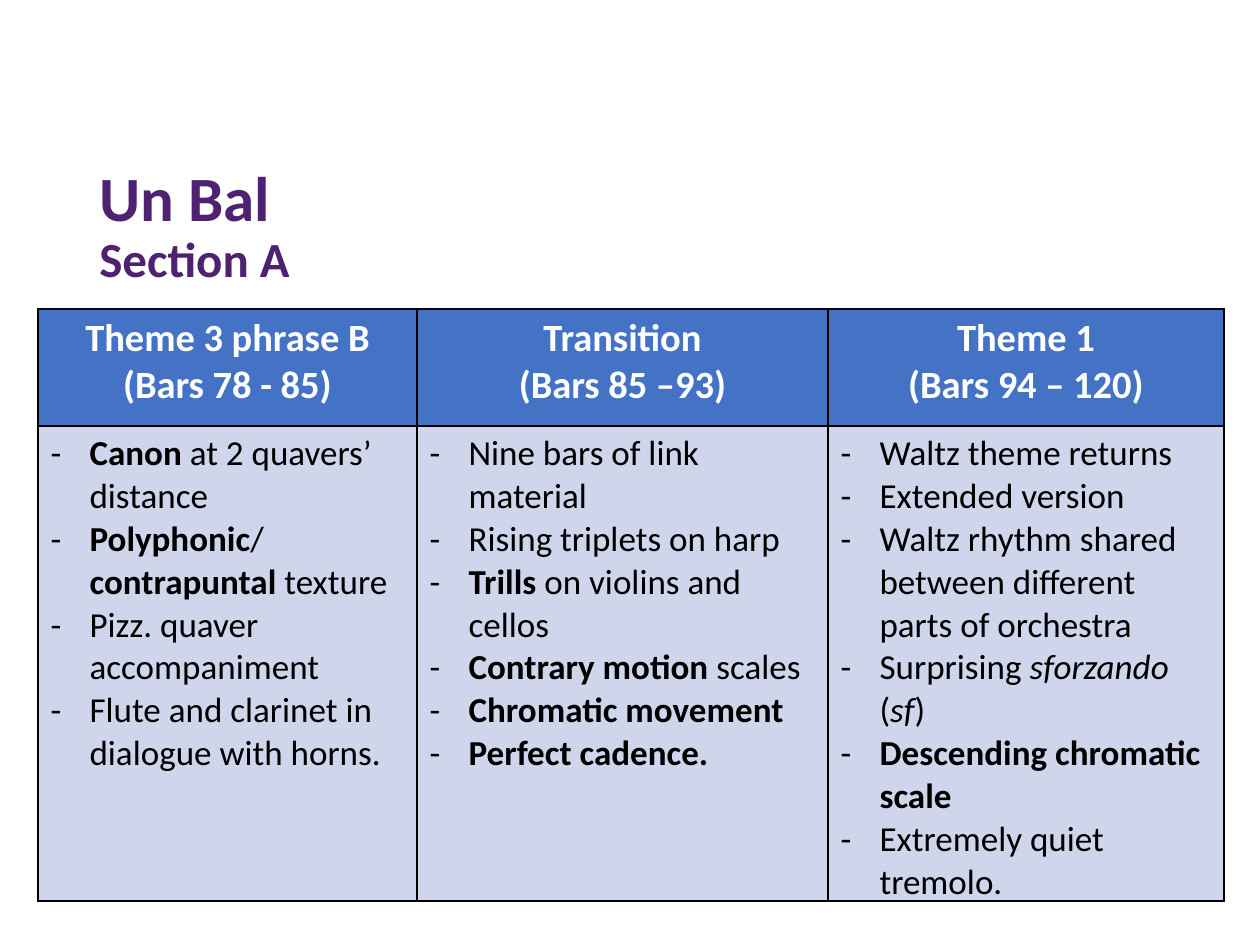
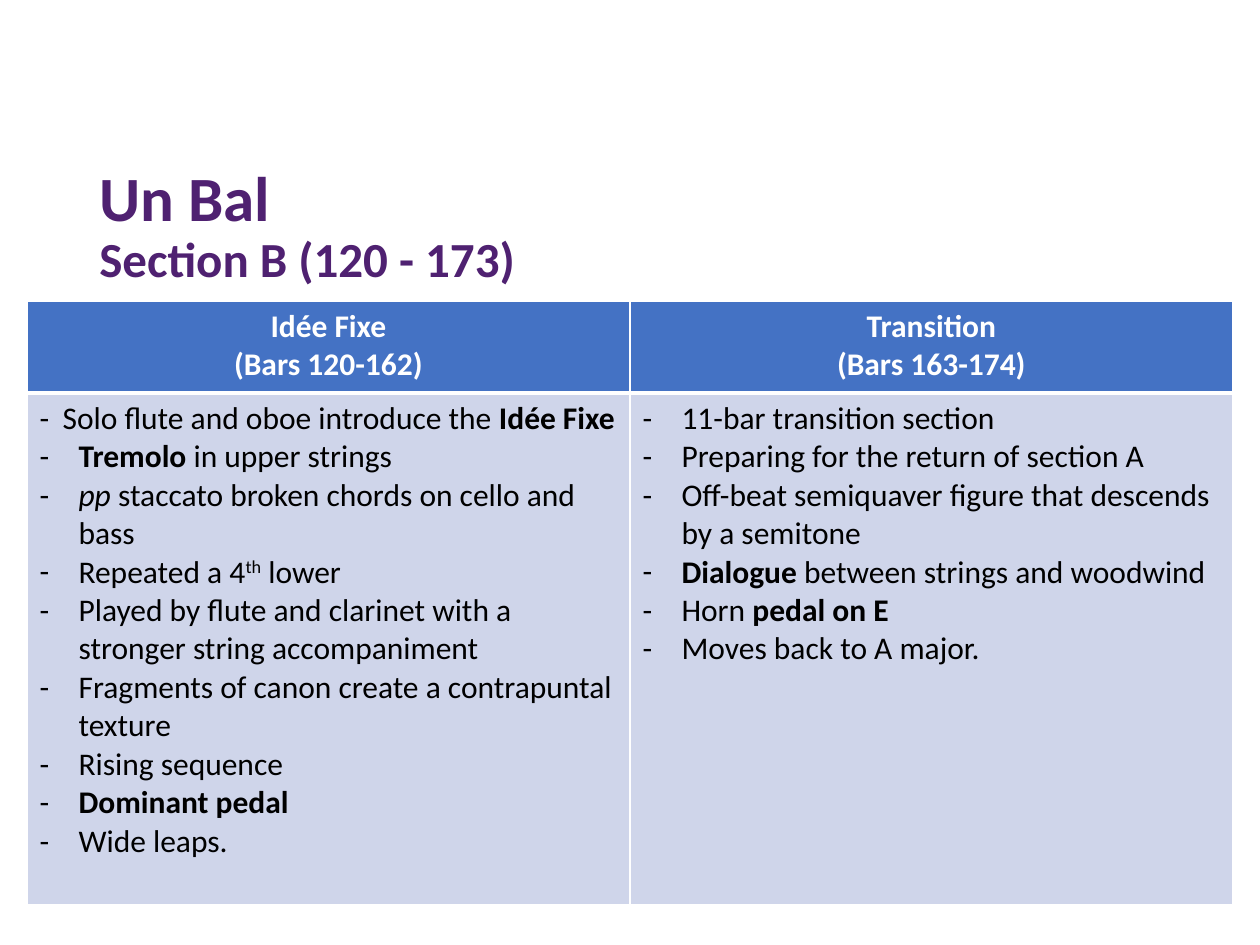
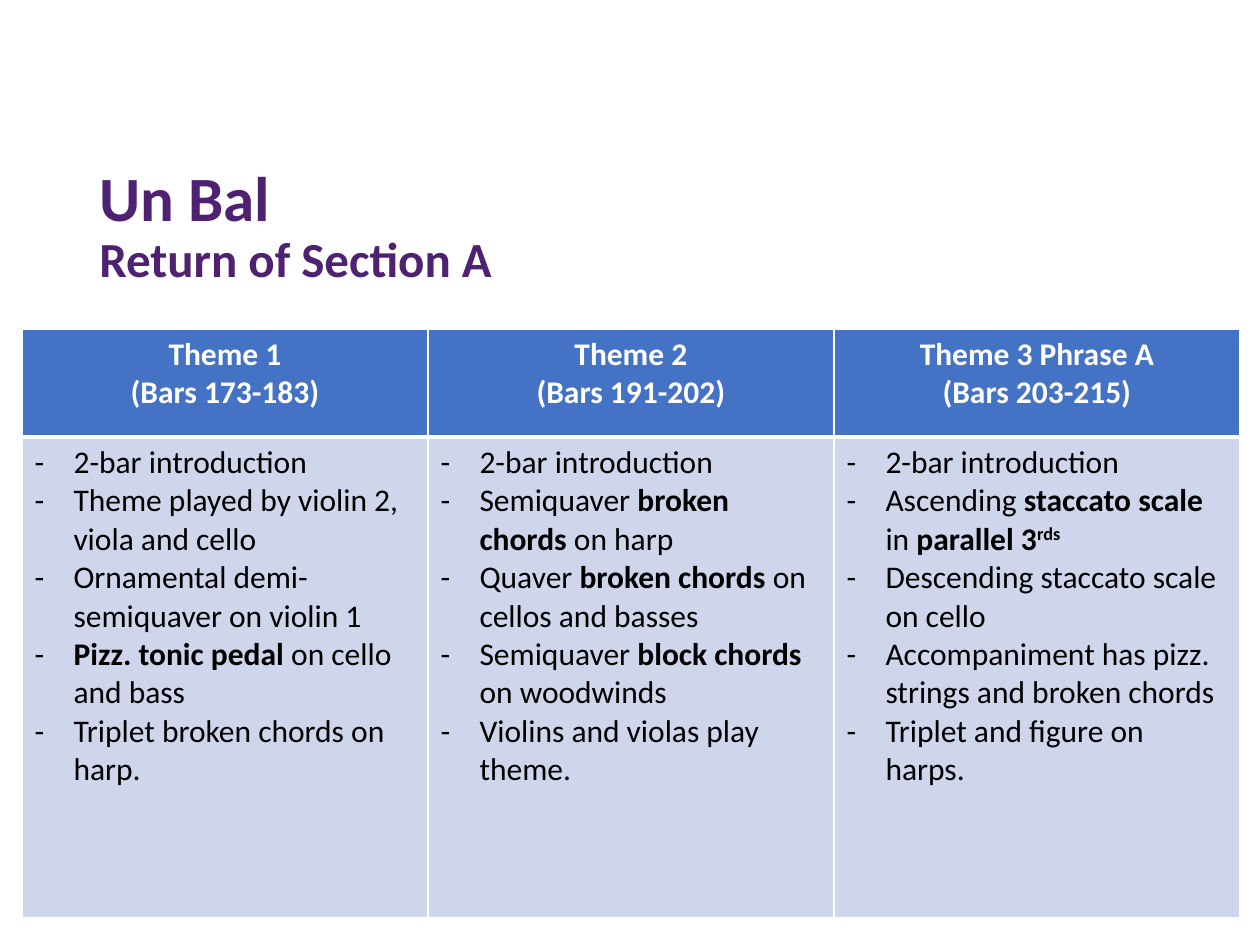
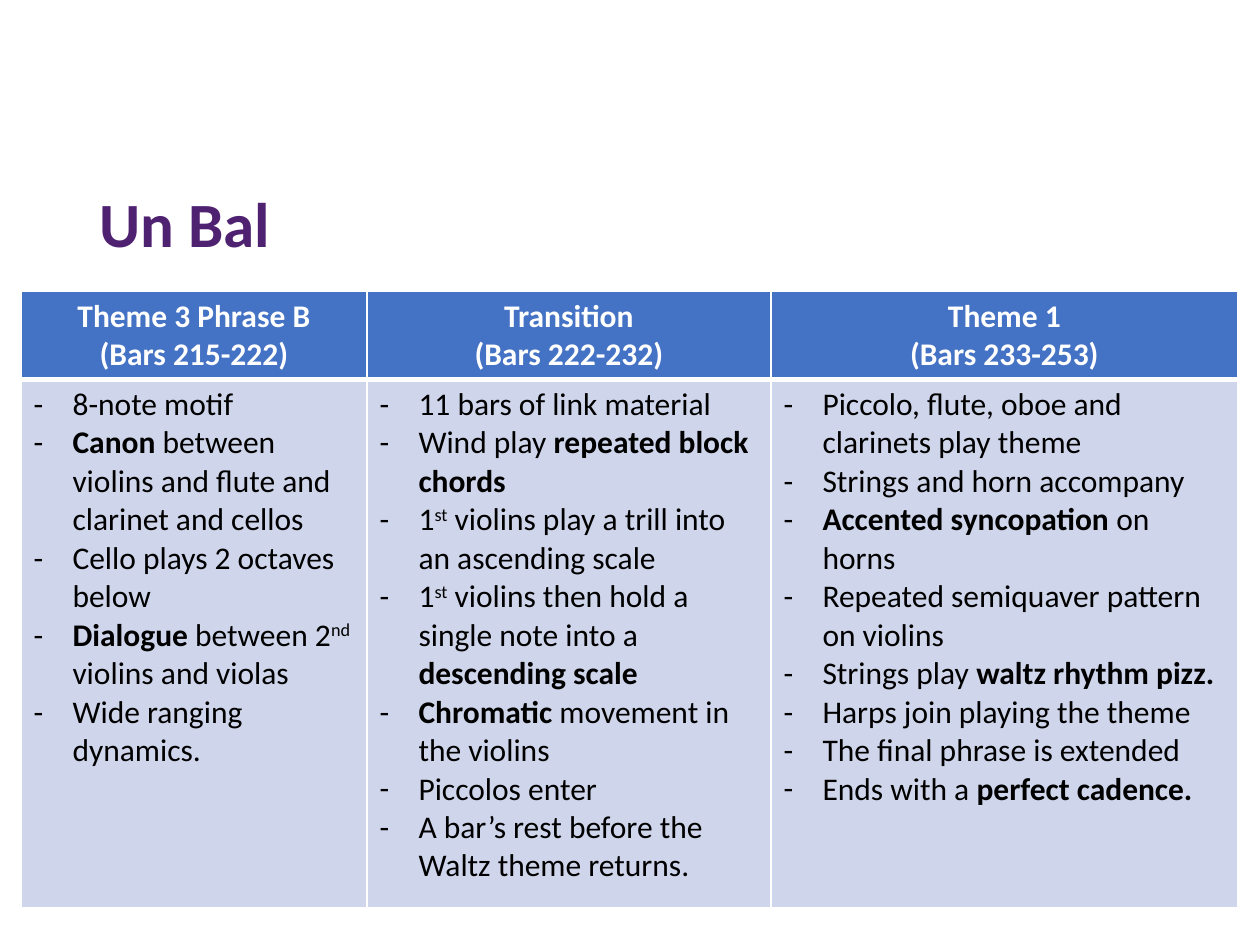
from dataclasses import dataclass

from lxml.etree import SubElement
from pptx import Presentation
from pptx.dml.color import RGBColor
from pptx.enum.text import MSO_ANCHOR, PP_ALIGN
from pptx.oxml.ns import qn
from pptx.util import Emu, Pt

PX_PER_INCH = 126
FONT = "Calibri"
COLORS = {
    "title": "4F2171",
    "header": "4472C4",
    "body": "CFD5EA",
    "white": "FFFFFF",
    "black": "000000",
}
TITLE_BOX = (87, 136, 1086, 183)
TITLE_SIZE, SECTION_SIZE = 36, 28
BULLET_INDENT, TIGHT_INDENT = 39, 23
BOLD, ITALIC, SUPERSCRIPT = "*", "_", "^"


@dataclass
class SectionSlide:
    """Content and geometry of one section of the movement."""
    section: str
    origin: tuple
    widths: list
    heights: list
    themes: list
    header_size: int = 18
    body_size: int = 18
    grid: str = "white"
    divider: int = 3


SECTIONS = [
    SectionSlide(
        "Section A", (38, 309), [379, 411, 396], [117, 470],
        [
            ("Theme 3 phrase B", "(Bars 78 - 85)", [
                "*Canon* at 2 quavers’ distance",
                "*Polyphonic*/ *contrapuntal* texture",
                "Pizz. quaver accompaniment",
                "Flute and clarinet in dialogue with horns.",
            ]),
            ("Transition", "(Bars 85 –93)", [
                "Nine bars of link material",
                "Rising triplets on harp",
                "*Trills* on violins and cellos",
                "*Contrary motion *scales",
                "*Chromatic movement*",
                "*Perfect cadence.*",
            ]),
            ("Theme 1", "(Bars 94 – 120)", [
                "Waltz theme returns",
                "Extended version",
                "Waltz rhythm shared between different parts of orchestra",
                "Surprising _sforzando_ (_sf_)",
                "*Descending chromatic scale*",
                "Extremely quiet tremolo.",
            ]),
        ],
        header_size=22, body_size=20, grid="black", divider=1,
    ),
    SectionSlide(
        "Section B (120 - 173)", (27, 301), [603, 603], [92, 512],
        [
            ("Idée Fixe", "(Bars 120-162)", [
                "- Solo flute and oboe introduce the *Idée Fixe*",
                "*Tremolo* in upper strings",
                "_pp_ staccato broken chords on cello and bass",
                "Repeated a 4^th^ lower",
                "Played by flute and clarinet with a stronger string accompaniment",
                "Fragments of canon create a contrapuntal texture",
                "Rising sequence",
                "*Dominant pedal*",
                "Wide leaps.",
            ]),
            ("Transition", "(Bars 163-174)", [
                "11-bar transition section",
                "Preparing for the return of section A",
                "Off-beat semiquaver figure that descends by a semitone",
                "*Dialogue* between strings and woodwind",
                "Horn *pedal on E*",
                "Moves back to A major.",
            ]),
        ],
    ),
    SectionSlide(
        "Return of Section A", (22, 329), [406, 406, 406], [108, 481],
        [
            ("Theme 1", "(Bars 173-183)", [
                "2-bar introduction",
                "Theme played by violin 2, viola and cello",
                "Ornamental demi-semiquaver on violin 1",
                "*Pizz. tonic pedal *on cello and bass",
                "Triplet broken chords on harp.",
            ]),
            ("Theme 2", "(Bars 191-202)", [
                "2-bar introduction",
                "Semiquaver *broken chords* on harp",
                "Quaver *broken chords *on cellos and basses",
                "Semiquaver *block chords* on woodwinds",
                "Violins and violas play theme.",
            ]),
            ("Theme 3 Phrase A", "(Bars 203-215)", [
                "2-bar introduction",
                "Ascending *staccato scale* in *parallel 3^rds^*",
                "Descending staccato scale on cello",
                "Accompaniment has pizz. strings and broken chords",
                "Triplet and figure on harps.",
            ]),
        ],
    ),
    SectionSlide(
        "", (21, 291), [346, 404, 467], [88, 529],
        [
            ("Theme 3 Phrase B", "(Bars 215-222)", [
                "8-note motif",
                "*Canon* between violins and flute and clarinet and cellos",
                "Cello plays 2 octaves below",
                "*Dialogue* between 2^nd^ violins and violas",
                "Wide ranging dynamics.",
            ]),
            ("Transition", "(Bars 222-232)", [
                "11 bars of link material",
                "Wind play *repeated block chords*",
                "1^st^ violins play a trill into an ascending scale",
                "1^st^ violins then hold a single note into a *descending scale*",
                "*Chromatic* movement in the violins",
                "Piccolos enter",
                "A bar’s rest before the Waltz theme returns.",
            ]),
            ("Theme 1", "(Bars 233-253)", [
                "Piccolo, flute, oboe and clarinets play theme",
                "Strings and horn accompany",
                "*Accented syncopation *on horns",
                "Repeated semiquaver pattern on violins",
                "Strings play *waltz rhythm pizz.*",
                "Harps join playing the theme",
                "The final phrase is extended",
                "Ends with a *perfect cadence.*",
            ]),
        ],
    ),
]


def px(length):
    """Turn a length in px into EMU."""
    return Emu(round(length * 914400 / PX_PER_INCH))


def rgb(name):
    """Look up a colour by its role."""
    return RGBColor.from_string(COLORS[name])


def styled_parts(text):
    """Yield each stretch of text with the set of marks in force."""
    marks, part = set(), ""
    for letter in text:
        if letter not in (BOLD, ITALIC, SUPERSCRIPT):
            part += letter
            continue
        if part:
            yield part, set(marks)
        marks ^= {letter}
        part = ""
    if part:
        yield part, marks


def add_run(paragraph, text, size, color, marks):
    """Add one run in the deck's font."""
    run = paragraph.add_run()
    run.text = text
    run.font.name = FONT
    run.font.size = Pt(size)
    run.font.color.rgb = rgb(color)
    run.font.bold = BOLD in marks
    run.font.italic = ITALIC in marks
    if SUPERSCRIPT in marks:
        run.font._element.set("baseline", "30000")


def add_title(slide, box, section):
    """Place the movement's name with its section below it."""
    frame = slide.shapes.add_textbox(*map(px, box)).text_frame
    frame.word_wrap = True
    frame.vertical_anchor = MSO_ANCHOR.MIDDLE
    title = frame.paragraphs[0]
    title.line_spacing = 0.9
    add_run(title, "Un Bal", TITLE_SIZE, "title", {BOLD})
    if section:
        title.add_line_break()
        add_run(title, section, SECTION_SIZE, "title", {BOLD})


def style_cell(cell, fill, grid, top=1, bottom=1):
    """Draw the cell's borders and fill it."""
    properties = cell._tc.get_or_add_tcPr()
    for side, points in (("L", 1), ("R", 1), ("T", top), ("B", bottom)):
        border = SubElement(properties, qn(f"a:ln{side}"), w=str(Pt(points)))
        ink = SubElement(border, qn("a:solidFill"))
        SubElement(ink, qn("a:srgbClr"), val=COLORS[grid])
    cell.fill.solid()
    cell.fill.fore_color.rgb = rgb(fill)


def cell_paragraphs(cell, lines):
    """Yield one paragraph of the cell for each line."""
    frame = cell.text_frame
    for index, line in enumerate(lines):
        yield (frame.add_paragraph() if index else frame.paragraphs[0]), line


def add_dash(paragraph, indent):
    """Give the paragraph a hanging dash."""
    properties = paragraph._p.get_or_add_pPr()
    properties.set("marL", str(px(indent)))
    properties.set("indent", str(-px(indent)))
    SubElement(properties, qn("a:buFont"), typeface=FONT)
    SubElement(properties, qn("a:buChar"), char="-")


def fill_header(cell, lines, size):
    """Write the theme's name and bars, centred."""
    for paragraph, line in cell_paragraphs(cell, lines):
        paragraph.alignment = PP_ALIGN.CENTER
        add_run(paragraph, line, size, "white", {BOLD})


def fill_features(cell, features, size):
    """Write the theme's features as a dashed list."""
    for paragraph, feature in cell_paragraphs(cell, features):
        tight = feature.startswith("- ")
        add_dash(paragraph, TIGHT_INDENT if tight else BULLET_INDENT)
        for text, marks in styled_parts(feature.removeprefix("- ")):
            add_run(paragraph, text, size, "black", marks)


def add_theme_table(slide, content):
    """Place the table with one column for each theme."""
    box = (*content.origin, sum(content.widths), sum(content.heights))
    table = slide.shapes.add_table(2, len(content.themes), *map(px, box)).table
    table.horz_banding = False
    for row, height in zip(table.rows, content.heights):
        row.height = px(height)
    for column, width in enumerate(content.widths):
        table.columns[column].width = px(width)
        name, bars, features = content.themes[column]
        header, body = table.cell(0, column), table.cell(1, column)
        style_cell(header, "header", content.grid, bottom=content.divider)
        style_cell(body, "body", content.grid, top=content.divider)
        fill_header(header, (name, bars), content.header_size)
        fill_features(body, features, content.body_size)


def main():
    """Build the deck and save it."""
    deck = Presentation()
    deck.slide_width, deck.slide_height = px(1260), px(945)
    for content in SECTIONS:
        slide = deck.slides.add_slide(deck.slide_layouts[6])
        add_title(slide, TITLE_BOX, content.section)
        add_theme_table(slide, content)
    deck.save("out.pptx")


if __name__ == "__main__":
    main()
